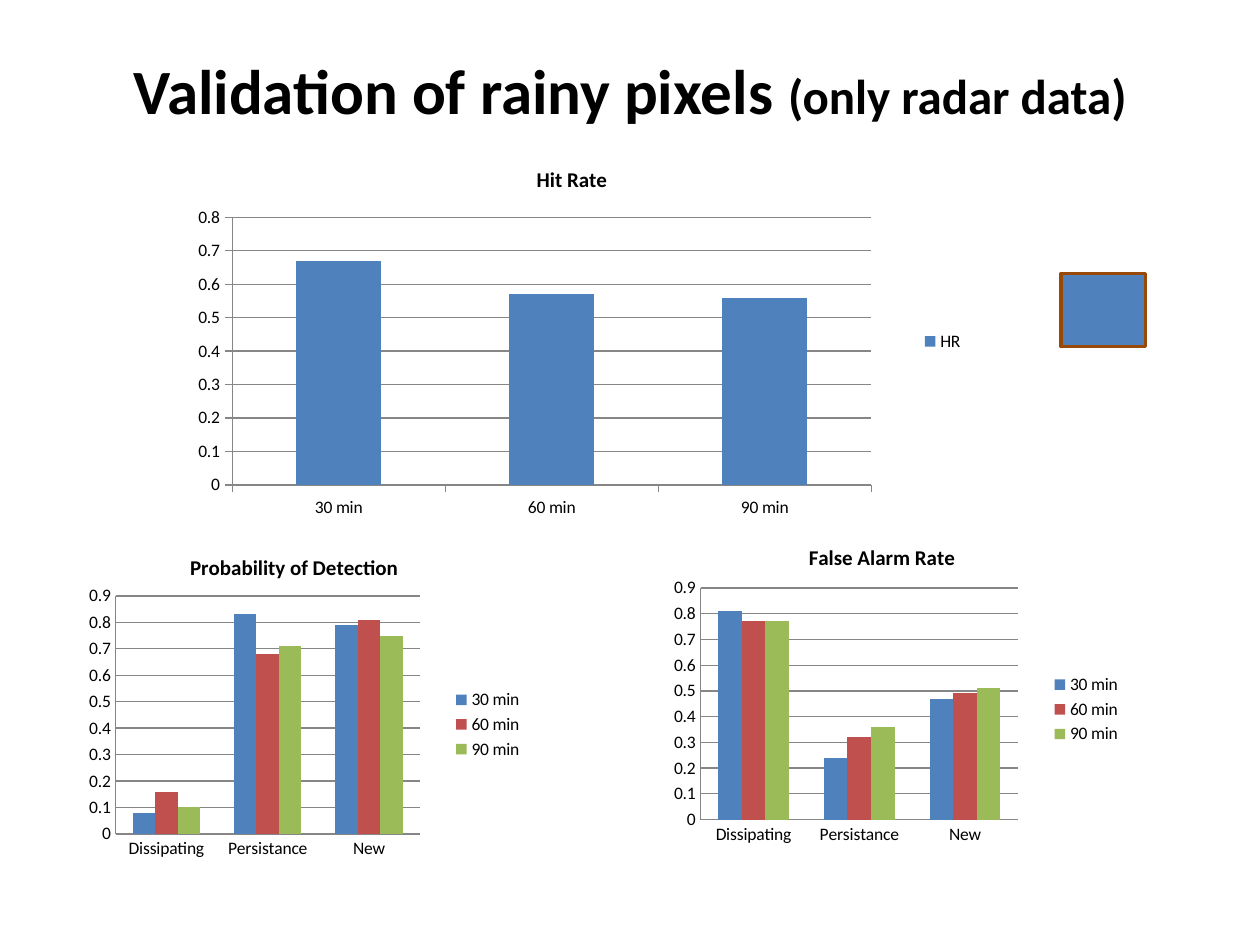
from lxml.etree import SubElement
from pptx import Presentation
from pptx.chart.data import CategoryChartData
from pptx.dml.color import RGBColor
from pptx.enum.chart import XL_CHART_TYPE, XL_LEGEND_POSITION, XL_TICK_MARK
from pptx.enum.shapes import MSO_SHAPE
from pptx.enum.text import MSO_ANCHOR, PP_ALIGN
from pptx.oxml.ns import qn
from pptx.util import Inches, Pt

FONT = "Calibri"
COLORS = {"text": "000000", "axis": "868686", "border": "984807",
          "blue": "4F81BD", "red": "C0504D", "green": "9BBB59"}
SERIES_COLORS = ("blue", "red", "green")
TIMES = ("30 min", "60 min", "90 min")
RAIN_TYPES = ("Dissipating", "Persistance", "New")


def rgb(name):
    return RGBColor.from_string(COLORS[name])


def set_font(font, size, bold=False):
    font.name, font.size, font.bold = FONT, Pt(size), bold
    font.color.rgb = rgb("text")


def add_title(s, parts):
    title = s.shapes.title
    title.left, title.top = Inches(0.5), Inches(0.17)
    title.width, title.height = Inches(9), Inches(1.08)
    tf = title.text_frame
    tf.vertical_anchor = MSO_ANCHOR.MIDDLE
    p = tf.paragraphs[0]
    p.alignment = PP_ALIGN.CENTER
    for text, size in parts:
        r = p.add_run()
        r.text = text
        set_font(r.font, size, bold=True)


def set_plot_layout(chart, box):
    """Place the inner plot area, given as shares of the chart's size."""
    area = chart._chartSpace.chart.plotArea
    for old in area.findall(qn("c:layout")):
        area.remove(old)
    layout = SubElement(area, qn("c:layout"))
    area.insert(0, layout)
    manual = SubElement(layout, qn("c:manualLayout"))
    settings = [("layoutTarget", "inner"), ("xMode", "edge"), ("yMode", "edge")]
    settings += zip("xywh", box)
    for tag, value in settings:
        SubElement(manual, qn(f"c:{tag}")).set("val", str(value))


def format_axes(chart, top, tick):
    for axis in (chart.category_axis, chart.value_axis):
        axis.major_tick_mark = tick
        axis.minor_tick_mark = XL_TICK_MARK.NONE
        axis.format.line.color.rgb = rgb("axis")
        axis.format.line.width = Pt(0.75)
    axis = chart.value_axis
    axis.minimum_scale, axis.maximum_scale, axis.major_unit = 0, top, 0.1
    axis.has_major_gridlines = True
    axis.major_gridlines.format.line.color.rgb = rgb("axis")
    axis.major_gridlines.format.line.width = Pt(0.75)


def add_column_chart(s, title, box, plot_box, categories, series, top,
                     tick=XL_TICK_MARK.NONE):
    data = CategoryChartData(number_format="General")
    data.categories = categories
    for name, values in series.items():
        data.add_series(name, values)
    chart = s.shapes.add_chart(XL_CHART_TYPE.COLUMN_CLUSTERED,
                               *map(Inches, box), data).chart
    set_font(chart.font, 10)

    chart.has_title = True
    p = chart.chart_title.text_frame.paragraphs[0]
    p.text = title
    set_font(p.font, 12, bold=True)
    chart.chart_title.include_in_layout = False

    chart.has_legend = True
    chart.legend.position = XL_LEGEND_POSITION.RIGHT
    chart.legend.include_in_layout = False

    plot = chart.plots[0]
    plot.gap_width, plot.overlap, plot.vary_by_categories = 150, 0, False
    for item, color in zip(plot.series, SERIES_COLORS):
        item.format.fill.solid()
        item.format.fill.fore_color.rgb = rgb(color)
    format_axes(chart, top, tick)
    set_plot_layout(chart, plot_box)


def add_box(s, box):
    sp = s.shapes.add_shape(MSO_SHAPE.RECTANGLE, *map(Inches, box))
    sp.shadow.inherit = False
    sp.fill.solid()
    sp.fill.fore_color.rgb = rgb("blue")
    sp.line.color.rgb = rgb("border")
    sp.line.width = Pt(2)


def main():
    prs = Presentation()
    prs.slide_width, prs.slide_height = Inches(10), Inches(7.5)
    s = prs.slides.add_slide(prs.slide_layouts[5])

    add_title(s, [("Validation of rainy pixels ", 36), ("(only radar data)", 28)])

    # Overall hit rate by lead time
    add_column_chart(s, "Hit Rate", (1.33, 1.17, 6.42, 3.08),
                     (0.08, 0.18, 0.79, 0.69), TIMES,
                     {"HR": (0.67, 0.57, 0.56)}, 0.8, XL_TICK_MARK.OUTSIDE)

    # Scores by type of rainy pixel, one series per lead time
    detection = ((0.08, 0.83, 0.79), (0.16, 0.68, 0.81), (0.1, 0.71, 0.75))
    add_column_chart(s, "Probability of Detection", (0.42, 4.25, 3.83, 3),
                     (0.13, 0.16, 0.63, 0.63), RAIN_TYPES,
                     dict(zip(TIMES, detection)), 0.9)
    false_alarm = ((0.81, 0.24, 0.47), (0.77, 0.32, 0.49), (0.77, 0.36, 0.51))
    add_column_chart(s, "False Alarm Rate", (5, 4.17, 4, 2.92),
                     (0.14, 0.17, 0.63, 0.63), RAIN_TYPES,
                     dict(zip(TIMES, false_alarm)), 0.9)

    # Outlined box beside the hit rate
    add_box(s, (8.42, 2.17, 0.67, 0.58))

    prs.save("out.pptx")


if __name__ == "__main__":
    main()
